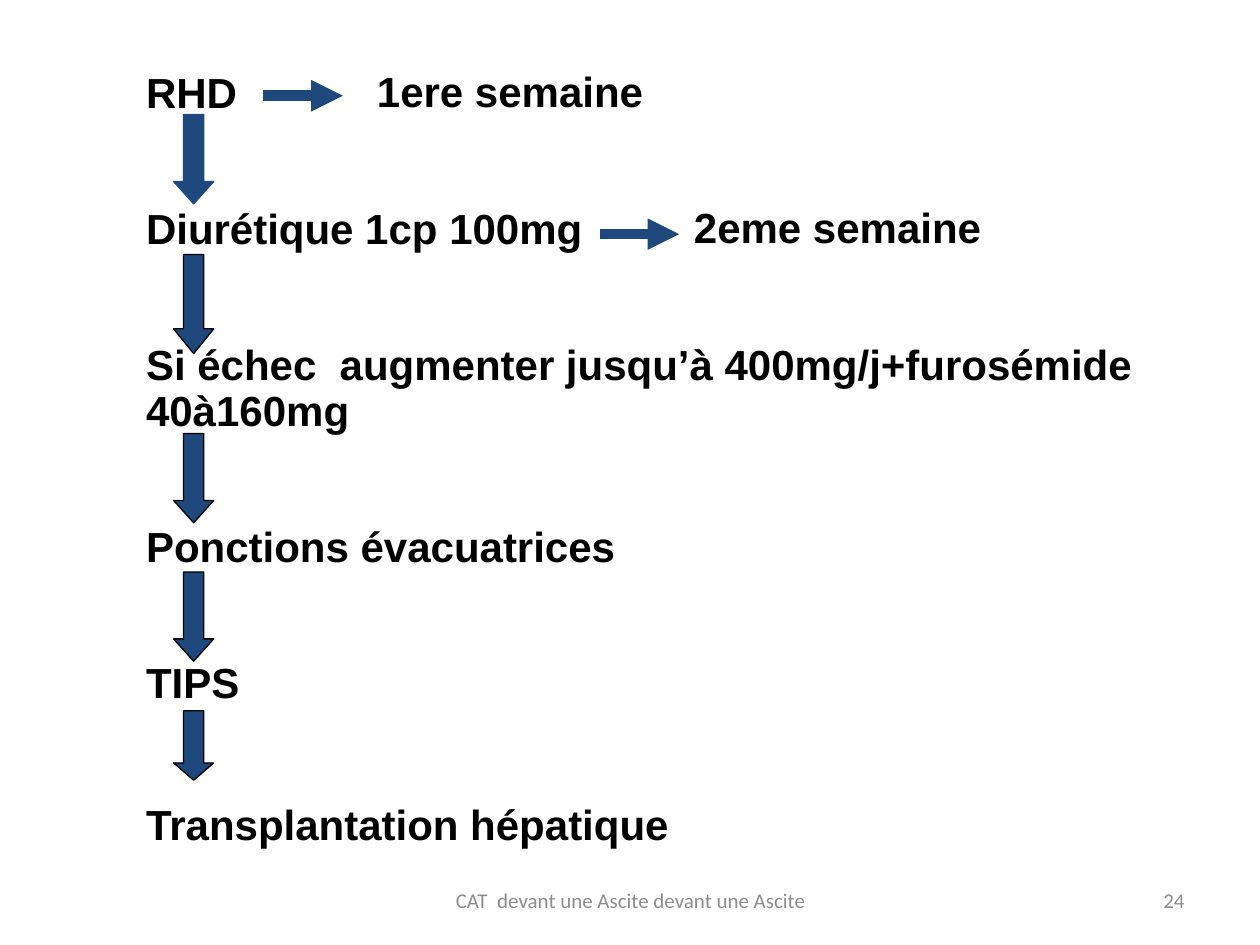
import pptx
import pptx.dml.color
import pptx.enum.shapes
import pptx.enum.text
import pptx.oxml
import pptx.oxml.ns
import pptx.util
from pptx.util import Cm, Pt

COLOURS = {"text": "000000", "arrow": "1F497D", "outline": "000000", "footer": "8C8C8C"}
ALIGN = pptx.enum.text.PP_ALIGN

STEPS = [
    "RHD",
    "Diurétique 1cp 100mg",
    "Si échec  augmenter jusqu’à 400mg/j+furosémide 40à160mg",
    "Ponctions évacuatrices",
    "TIPS",
    "Transplantation hépatique",
]
DOWN_ARROWS = [
    (2.31, 1.8, "arrow"),
    (5.13, 2.0, "outline"),
    (8.74, 1.8, "outline"),
    (11.53, 1.8, "outline"),
    (14.33, 1.4, "outline"),
]
WEEKS = [
    ("1ere semaine", 7.35, 1.32, 5.31, 1.93),
    ("2eme semaine", 13.74, 4.06, 12.09, 4.72),
]


def colour(name):
    return pptx.dml.color.RGBColor.from_string(COLOURS[name])


def add_element(parent, tag, **attributes):
    element = pptx.oxml.parse_xml(f"<{tag} {pptx.oxml.ns.nsdecls('a')}/>")
    for name, value in attributes.items():
        element.set(name, value)
    parent.append(element)


class SlideBuilder:
    body_font = "Arial"
    footer_font = "Calibri"

    def __init__(self, slide):
        self.slide = slide

    def style(self, paragraph, font_name, size, colour_name, bold=False):
        font = paragraph.font
        font.name = font_name
        font.size = Pt(size)
        font.bold = bold
        font.color.rgb = colour(colour_name)

    def body_style(self, paragraph):
        paragraph.line_spacing = 0.9
        self.style(paragraph, self.body_font, 24, "text", bold=True)

    def steps(self, left, top, width, height, steps):
        box = self.slide.placeholders[1]
        box.left, box.top, box.width, box.height = map(Cm, (left, top, width, height))
        frame = box.text_frame
        frame.auto_size = pptx.enum.text.MSO_AUTO_SIZE.NONE
        for index, text in enumerate(steps):
            paragraph = frame.paragraphs[0] if index == 0 else frame.add_paragraph()
            paragraph.text = text
            properties = paragraph._p.get_or_add_pPr()
            properties.set("marL", "0")
            properties.set("indent", "0")
            add_element(properties, "a:buNone")
            paragraph.space_before = Pt(52 if index else 0)
            self.body_style(paragraph)
        paragraph.space_before = Pt(55)

    def text_box(self, left, top, width, height, text):
        box = self.slide.shapes.add_textbox(Cm(left), Cm(top), Cm(width), Cm(height))
        box.text_frame.word_wrap = True
        box.text_frame.text = text
        return box.text_frame

    def week(self, left, top, text):
        frame = self.text_box(left, top, 7, 1.2, text)
        self.body_style(frame.paragraphs[0])

    def footer(self, left, width, text, alignment):
        frame = self.text_box(left, 17.65, width, 1.01, text)
        frame.vertical_anchor = pptx.enum.text.MSO_ANCHOR.MIDDLE
        paragraph = frame.paragraphs[0]
        paragraph.alignment = alignment
        self.style(paragraph, self.footer_font, 12, "footer")

    def down_arrow(self, left, top, width, height, line):
        arrow = self.slide.shapes.add_shape(
            pptx.enum.shapes.MSO_SHAPE.DOWN_ARROW, Cm(left), Cm(top), Cm(width), Cm(height))
        arrow.adjustments[0] = 0.5
        arrow.adjustments[1] = 0.25 * height / width
        arrow.shadow.inherit = False
        arrow.fill.solid()
        arrow.fill.fore_color.rgb = colour("arrow")
        arrow.line.color.rgb = colour(line)
        arrow.line.width = Pt(0.75)

    def week_arrow(self, left, top, length):
        arrow = self.slide.shapes.add_connector(
            pptx.enum.shapes.MSO_CONNECTOR.STRAIGHT,
            Cm(left), Cm(top), Cm(left + length), Cm(top))
        arrow.line.color.rgb = colour("arrow")
        arrow.line.width = Pt(6)
        add_element(arrow.line._get_or_add_ln(), "a:tailEnd", type="triangle")
        add_element(arrow._element.spPr, "a:effectLst")


def main():
    deck = pptx.Presentation()
    deck.slide_width, deck.slide_height = Cm(25.4), Cm(19.05)
    slide = deck.slides.add_slide(deck.slide_layouts[1])
    title = slide.shapes.title._element
    title.getparent().remove(title)

    builder = SlideBuilder(slide)
    builder.steps(2.69, 1.32, 21.41, 16.89, STEPS)
    for top, height, line in DOWN_ARROWS:
        builder.down_arrow(3.5, top, 0.81, height, line)
    for text, text_left, text_top, arrow_left, arrow_top in WEEKS:
        builder.week(text_left, text_top, text)
        builder.week_arrow(arrow_left, arrow_top, 1.6)
    builder.footer(18.21, 5.92, "24", ALIGN.RIGHT)
    builder.footer(8.69, 8.05, "CAT  devant une Ascite devant une Ascite", ALIGN.CENTER)
    deck.save("out.pptx")


if __name__ == "__main__":
    main()
